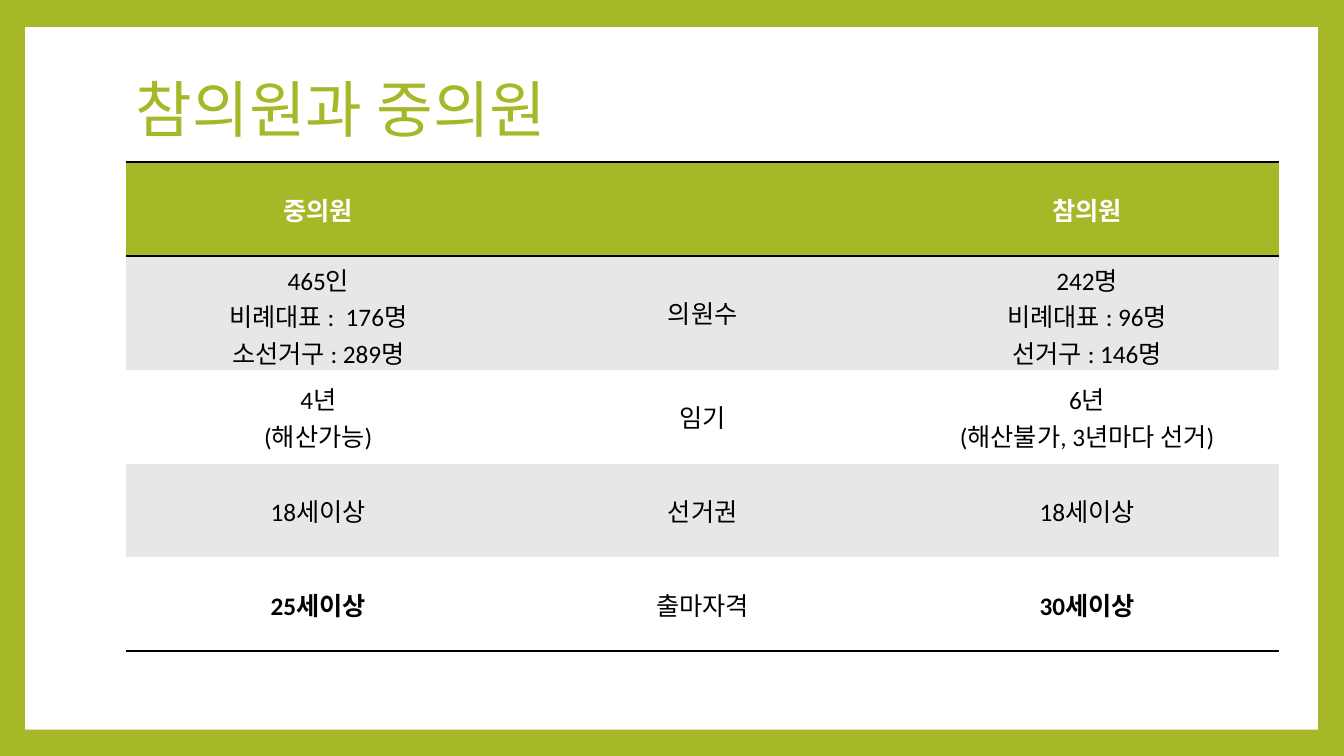
import pptx
import pptx.util
import pptx.dml.color
import pptx.enum.shapes
import pptx.enum.text
import pptx.oxml
import pptx.oxml.ns

Inches = pptx.util.Inches
GREEN, WHITE, GREY, BLACK = "A6B727", "FFFFFF", "E7E7E7", "000000"


def color(hex):
    return pptx.dml.color.RGBColor.from_string(hex)


def style(para, size, hex, bold=False):
    for run in para.runs:
        run.font.name = "Calibri"
        run.font.size = pptx.util.Pt(size)
        run.font.bold = bold
        run.font.color.rgb = color(hex)


deck = pptx.Presentation()
deck.slide_width = Inches(13.33)
deck.slide_height = Inches(7.5)
slide = deck.slides.add_slide(deck.slide_layouts[6])
slide.background.fill.solid()
slide.background.fill.fore_color.rgb = color(GREEN)

panel = slide.shapes.add_shape(
    pptx.enum.shapes.MSO_SHAPE.RECTANGLE,
    Inches(0.25), Inches(0.27), Inches(12.82), Inches(6.97))
panel.shadow.inherit = False
panel.fill.solid()
panel.fill.fore_color.rgb = color(WHITE)
panel.line.fill.background()

title = slide.shapes.add_textbox(Inches(1.25), Inches(0.67), Inches(10.8), Inches(0.89))
frame = title.text_frame
frame.word_wrap = True
frame.vertical_anchor = pptx.enum.text.MSO_ANCHOR.MIDDLE
frame.text = "참의원과 중의원"
frame.paragraphs[0].line_spacing = 0.9
style(frame.paragraphs[0], 44, GREEN)

rows = [
    ("중의원", "", "참의원"),
    ("465인\n비례대표 :  176명\n소선거구 : 289명", "의원수",
     "242명\n비례대표 : 96명\n선거구 : 146명"),
    ("4년\n(해산가능)", "임기", "6년\n(해산불가, 3년마다 선거)"),
    ("18세이상", "선거권", "18세이상"),
    ("25세이상", "출마자격", "30세이상"),
]
fills = [GREEN, GREY, WHITE, GREY, WHITE]
highs = [0.93, 1.13, 0.93, 0.93, 0.93]
edges = {0: ("lnT", "lnB"), 4: ("lnB",)}

holder = slide.shapes.add_table(5, 3, Inches(1.25), Inches(1.61), Inches(11.44), Inches(4.86))
table = holder.table
table.first_row = False
table.horz_banding = False
plain = "{2D5ABB26-0587-4C30-8999-92F81FD0307C}"
table._tbl.tblPr.find(pptx.oxml.ns.qn("a:tableStyleId")).text = plain
for col in table.columns:
    col.width = Inches(11.44 / 3)

for r, texts in enumerate(rows):
    table.rows[r].height = Inches(highs[r])
    for c, text in enumerate(texts):
        cell = table.cell(r, c)
        cell.fill.solid()
        cell.fill.fore_color.rgb = color(fills[r])
        cell.vertical_anchor = pptx.enum.text.MSO_ANCHOR.MIDDLE
        cell.text_frame.text = text
        bold = r == 0 or (r == 4 and c != 1)
        for para in cell.text_frame.paragraphs:
            para.alignment = pptx.enum.text.PP_ALIGN.CENTER
            style(para, 18, WHITE if r == 0 else BLACK, bold)
        props = cell._tc.get_or_add_tcPr()
        for spot, edge in enumerate(edges.get(r, ())):
            line = pptx.oxml.parse_xml(
                f'<a:{edge} {pptx.oxml.ns.nsdecls("a")} w="{pptx.util.Pt(2)}">'
                f'<a:solidFill><a:srgbClr val="{BLACK}"/></a:solidFill></a:{edge}>')
            props.insert(spot, line)

deck.save("out.pptx")
